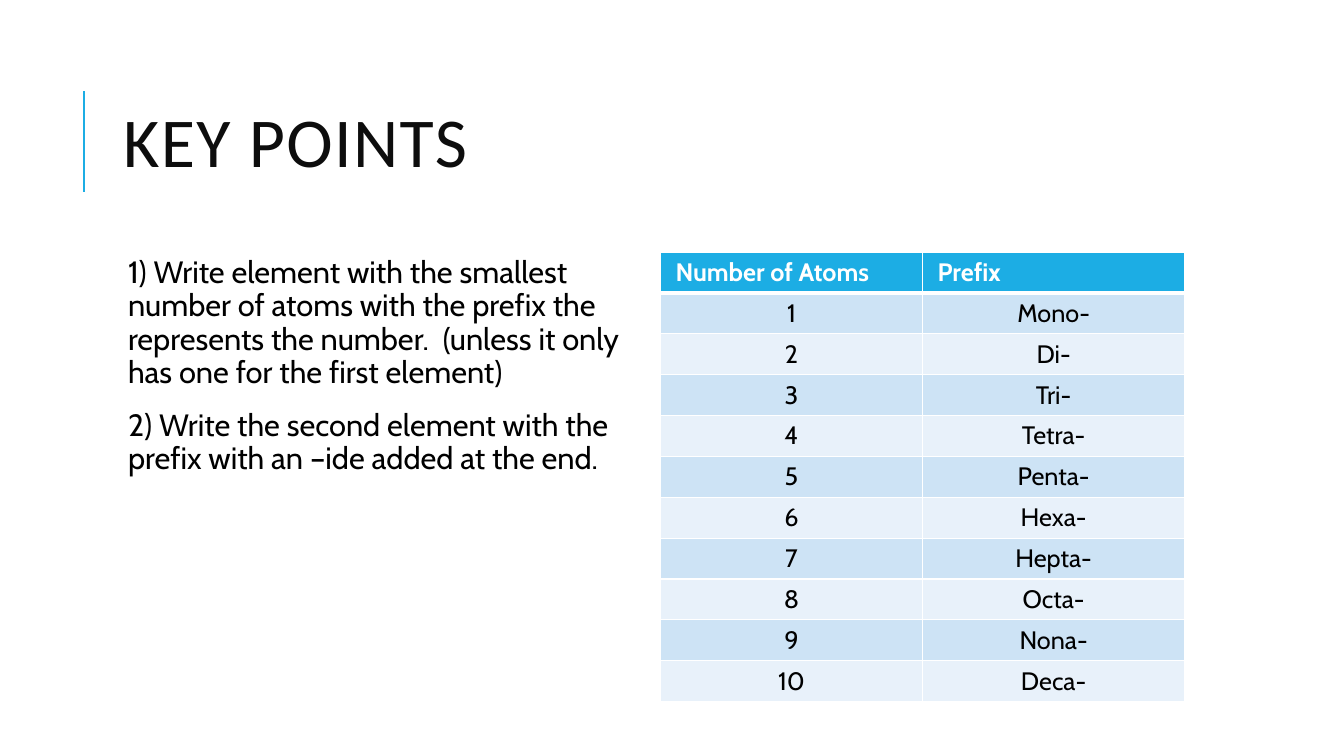
import dataclasses
import pptx
import pptx.dml.color
import pptx.enum.shapes
import pptx.enum.text
import pptx.oxml
import pptx.oxml.ns
import pptx.util

SCALE = 9144
ALIGN = pptx.enum.text.PP_ALIGN
ANCHOR = pptx.enum.text.MSO_ANCHOR
RGB = pptx.dml.color.RGBColor.from_string


def px(count):
    return pptx.util.Emu(count * SCALE)


@dataclasses.dataclass(frozen=True)
class Theme:
    accent: str = "1CADE4"
    dark: str = "0D0D0D"
    black: str = "000000"
    white: str = "FFFFFF"
    bands: tuple = ("CDE3F5", "E8F1FA")
    head: str = "Calibri"
    body: str = "Cabin"
    title: int = 50
    large: int = 22
    small: int = 18


def write(frame, text, *, font, size, color, bold=False, align=ALIGN.LEFT,
          space=1.0, before=0, after=0, indent=0, track=0):
    frame.text = text
    for para in frame.paragraphs:
        para.alignment = align
        para.line_spacing = space
        para.space_before = pptx.util.Pt(before)
        para.space_after = pptx.util.Pt(after)
        if indent:
            para._p.get_or_add_pPr().set("marL", str(px(indent)))
        for run in para.runs:
            run.font.name = font
            run.font.size = pptx.util.Pt(size)
            run.font.bold = bold
            run.font.color.rgb = RGB(color)
            if track:
                run._r.get_or_add_rPr().set("spc", str(track * 100))


class Deck:
    def __init__(self, theme):
        self.theme = theme
        self.file = pptx.Presentation()
        self.file.slide_width, self.file.slide_height = px(1333), px(750)
        self.slide = self.file.slides.add_slide(self.file.slide_layouts[5])

    def title(self, text, x, y, w, h):
        shape = self.slide.shapes.title
        shape.left, shape.top, shape.width, shape.height = map(px, (x, y, w, h))
        frame = shape.text_frame
        frame.auto_size = pptx.enum.text.MSO_AUTO_SIZE.NONE
        frame.vertical_anchor = ANCHOR.MIDDLE
        write(frame, text, font=self.theme.head, size=self.theme.title,
              color=self.theme.dark, space=0.8, track=1)

    def rule(self, x, y, h):
        kind = pptx.enum.shapes.MSO_CONNECTOR.STRAIGHT
        line = self.slide.shapes.add_connector(kind, px(x), px(y + h), px(x), px(y))
        line.line.color.rgb = RGB(self.theme.accent)
        line.line.width = pptx.util.Pt(1.5)
        line._element.spPr.append(pptx.oxml.parse_xml(
            f"<a:effectLst {pptx.oxml.ns.nsdecls('a')}/>"))

    def body(self, lines, x, y, w, h):
        frame = self.slide.shapes.add_textbox(*map(px, (x, y, w, h))).text_frame
        frame.word_wrap = True
        frame.margin_left = frame.margin_right = px(5)
        frame.margin_top = frame.margin_bottom = px(5)
        write(frame, "\n".join(lines), font=self.theme.body, size=self.theme.large,
              color=self.theme.black, space=0.9, before=12, after=2, indent=10)

    def border(self, cell, base):
        props = cell._tc.get_or_add_tcPr()
        widths = {"lnL": 1, "lnR": 1, "lnT": 1, "lnB": base}
        for spot, (side, width) in enumerate(widths.items()):
            props.insert(spot, pptx.oxml.parse_xml(
                f'<a:{side} {pptx.oxml.ns.nsdecls("a")} w="{pptx.util.Pt(width)}">'
                f'<a:solidFill><a:srgbClr val="{self.theme.white}"/></a:solidFill>'
                f'</a:{side}>'))

    def table(self, rows, x, y, w, h):
        theme = self.theme
        grid = self.slide.shapes.add_table(
            len(rows), len(rows[0]), *map(px, (x, y, w, h))).table
        for r, row in enumerate(rows):
            first = r == 0
            for c, text in enumerate(row):
                cell = grid.cell(r, c)
                cell.margin_left = cell.margin_right = px(15)
                cell.margin_top = cell.margin_bottom = px(5)
                cell.fill.solid()
                cell.fill.fore_color.rgb = RGB(
                    theme.accent if first else theme.bands[(r - 1) % 2])
                over = r == 1
                self.border(cell, 3 if first else 1)
                if over:
                    top = cell._tc.tcPr.find(pptx.oxml.ns.qn("a:lnT"))
                    top.set("w", str(pptx.util.Pt(3)))
                write(cell.text_frame, text, font=theme.body, size=theme.small,
                      color=theme.white if first else theme.black, bold=first,
                      align=ALIGN.LEFT if first else ALIGN.CENTER)


def main():
    names = ("Mono", "Di", "Tri", "Tetra", "Penta",
             "Hexa", "Hepta", "Octa", "Nona", "Deca")
    rows = [("Number of Atoms", "Prefix")]
    rows += [(str(count), f"{name}-") for count, name in enumerate(names, 1)]
    steps = (
        "1) Write element with the smallest number of atoms with the prefix the "
        "represents the number.  (unless it only has one for the first element)",
        "2) Write the second element with the prefix with an –ide added at the end.",
    )
    deck = Deck(Theme())
    deck.rule(83, 90, 100)
    deck.title("KEY POINTS", 112, 64, 1063, 164)
    deck.table(rows, 655, 250, 520, 446)
    deck.body(steps, 112, 250, 520, 440)
    deck.file.save("out.pptx")


if __name__ == "__main__":
    main()
